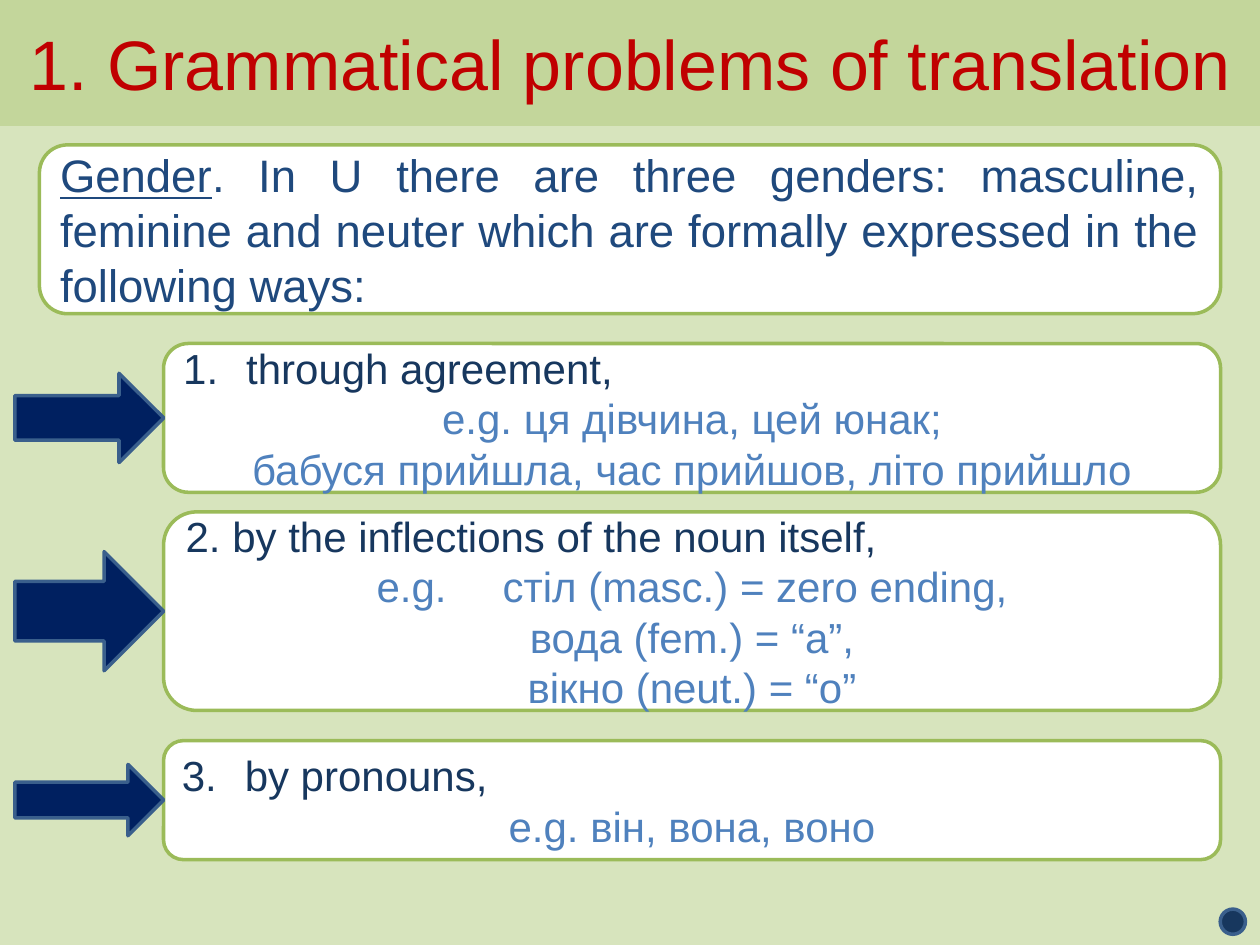
from lxml import etree
from pptx import Presentation
from pptx.dml.color import RGBColor
from pptx.enum.shapes import MSO_SHAPE
from pptx.enum.text import MSO_ANCHOR, PP_ALIGN
from pptx.oxml.ns import qn
from pptx.util import Pt

RECT = MSO_SHAPE.RECTANGLE
ROUNDED = MSO_SHAPE.ROUNDED_RECTANGLE
ARROW = MSO_SHAPE.RIGHT_ARROW
OVAL = MSO_SHAPE.OVAL
MIDDLE = MSO_ANCHOR.MIDDLE
CENTER = PP_ALIGN.CENTER
JUSTIFY = PP_ALIGN.JUSTIFY

WIDTH, HEIGHT = 720, 540
FONT = "Arial"
PAGE, BAND, WHITE = "D7E4BD", "C3D69B", "FFFFFF"
BORDER, EDGE = "9BBB59", "3A5F8C"
RED, BLUE, NAVY = "C00000", "1F497D", "17375E"
ARROW_BLUE, EXAMPLE_BLUE = "002060", "4F81BD"


def rgb(value):
    return RGBColor.from_string(value)


class GrammarSlide:
    def __init__(self, presentation):
        self.slide = presentation.slides.add_slide(presentation.slide_layouts[6])
        background = self.slide.background.fill
        background.solid()
        background.fore_color.rgb = rgb(PAGE)

    def shape(self, kind, left, top, width, height, fill, line, parent=None):
        shapes = (parent or self.slide).shapes
        item = shapes.add_shape(kind, Pt(left), Pt(top), Pt(width), Pt(height))
        item.shadow.inherit = False
        item.fill.solid()
        item.fill.fore_color.rgb = rgb(fill)
        item.line.color.rgb = rgb(line)
        item.line.width = Pt(2)
        item.text_frame.word_wrap = True
        item.text_frame.vertical_anchor = MIDDLE
        return item

    def style(self, paragraph, size, color, align):
        paragraph.alignment = align
        for run in paragraph.runs:
            run.font.name = FONT
            run.font.size = Pt(size)
            run.font.color.rgb = rgb(color)

    def number(self, paragraph, start):
        properties = paragraph._p.get_or_add_pPr()
        properties.set("marL", str(Pt(36)))
        properties.set("indent", str(-Pt(36)))
        bullet = etree.SubElement(properties, qn("a:buAutoNum"), type="arabicPeriod")
        if start > 1:
            bullet.set("startAt", str(start))

    def title(self, text):
        band = self.shape(RECT, 0, 0, WIDTH, 71.3, BAND, BAND)
        band.text_frame.text = text
        self.style(band.text_frame.paragraphs[0], 40, RED, CENTER)

    def intro(self, term, text):
        box = self.shape(ROUNDED, 22.5, 82.8, 675, 96.5, WHITE, BORDER)
        paragraph = box.text_frame.paragraphs[0]
        for part in (term, text):
            paragraph.add_run().text = part
        self.style(paragraph, 26, BLUE, JUSTIFY)
        paragraph.runs[0].font.underline = True

    def way(self, top, height, lines, start=None):
        group = self.slide.shapes.add_group_shape()
        box = self.shape(ROUNDED, 93.5, top, 604, height, WHITE, BORDER, group)
        box.text_frame.text = "\n".join(lines)
        heading, *examples = box.text_frame.paragraphs
        self.style(heading, 24, NAVY, JUSTIFY)
        if start:
            self.number(heading, start)
        for example in examples:
            self.style(example, 24, EXAMPLE_BLUE, CENTER)
        # The arrow is 60 % of the box height and centred on it
        self.shape(ARROW, 8.5, top + 0.2 * height, 85, 0.6 * height,
                   ARROW_BLUE, EDGE, group)

    def dot(self):
        self.shape(OVAL, 697.3, 519.5, 14.4, 14.4, NAVY, EDGE)


def main():
    presentation = Presentation()
    presentation.slide_width = Pt(WIDTH)
    presentation.slide_height = Pt(HEIGHT)
    page = GrammarSlide(presentation)

    # Title and introduction
    page.title("1. Grammatical problems of translation")
    page.intro("Gender", ". In U there are three genders: masculine, feminine and "
               "neuter which are formally expressed in the following ways:")
    page.dot()

    # Three ways of expressing gender
    page.way(196.3, 85, ["through agreement, ", "e.g. ця дівчина, цей юнак;",
                         "бабуся прийшла, час прийшов, літо прийшло"], start=1)
    page.way(292.5, 113.5, ["2. by the inflections of the noun itself,",
                            "e.g. \tстіл (masc.) = zero ending,",
                            "вода (fem.) = “a”,", "вікно (neut.) = “o”"])
    page.way(423.2, 68, ["by pronouns,", "e.g. він, вона, воно"], start=3)

    presentation.save("out.pptx")


if __name__ == "__main__":
    main()
